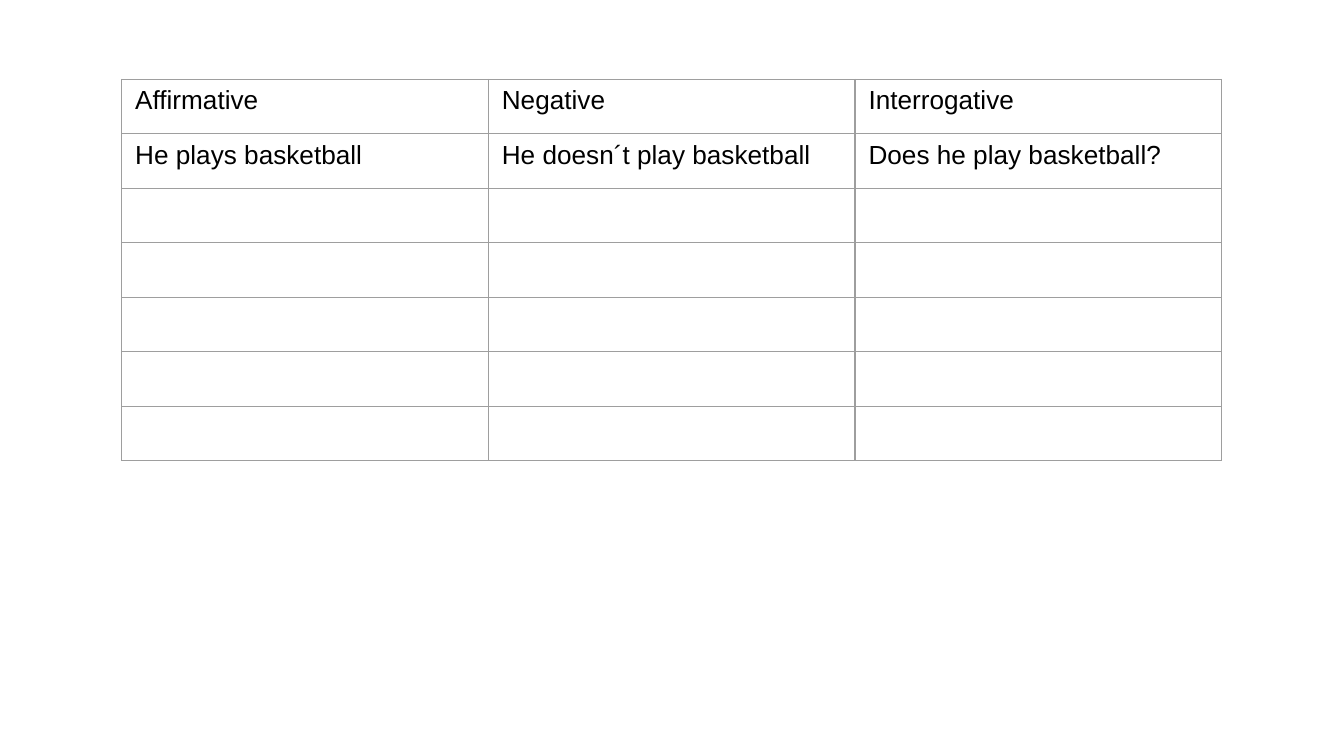
from lxml import etree
from pptx import Presentation
from pptx.dml.color import RGBColor
from pptx.oxml.ns import qn
from pptx.util import Cm, Pt

COLORS = {"text": "000000", "border": "9E9E9E"}
TEXT_FORMAT = {"name": "Arial", "size": Pt(14), "bold": False}
BORDER_WIDTH = Pt(0.75)
BORDER_SIDES = ("a:lnL", "a:lnR", "a:lnT", "a:lnB")
BLANK_LAYOUT = 6

SENTENCE_FORMS = [
    ("Affirmative", "Negative", "Interrogative"),
    ("He plays basketball", "He doesn´t play basketball", "Does he play basketball?"),
]
EMPTY_ROWS = 5


class SlideBuilder:
    """Holds the style and the slide being built."""

    def __init__(self, slide):
        self.slide = slide

    def table(self, rows, left, top, column_width, row_height):
        row_count, column_count = len(rows), len(rows[0])
        grid = self.slide.shapes.add_table(
            row_count, column_count, Cm(left), Cm(top),
            Cm(column_width * column_count), Cm(row_height * row_count),
        ).table
        grid.first_row = grid.horz_banding = False
        for column in grid.columns:
            column.width = Cm(column_width)
        for row, texts in zip(grid.rows, rows):
            row.height = Cm(row_height)
            for cell, text in zip(row.cells, texts):
                self.cell(cell, text)

    def cell(self, cell, text):
        cell.text = text
        font = cell.text_frame.paragraphs[0].font
        for attribute, value in TEXT_FORMAT.items():
            setattr(font, attribute, value)
        font.color.rgb = RGBColor.from_string(COLORS["text"])
        self.borders(cell)
        cell.fill.background()

    def borders(self, cell):
        properties = cell._tc.get_or_add_tcPr()
        for side in BORDER_SIDES:
            line = etree.SubElement(properties, qn(side), w=str(BORDER_WIDTH))
            fill = etree.SubElement(line, qn("a:solidFill"))
            etree.SubElement(fill, qn("a:srgbClr"), val=COLORS["border"])


def main():
    presentation = Presentation()
    presentation.slide_width, presentation.slide_height = Cm(25.4), Cm(14.29)
    slide = presentation.slides.add_slide(presentation.slide_layouts[BLANK_LAYOUT])

    # Example sentences, then rows for the learner to fill in
    exercise_rows = SENTENCE_FORMS + [("", "", "")] * EMPTY_ROWS
    SlideBuilder(slide).table(
        exercise_rows, left=2.3, top=1.5, column_width=6.93, row_height=1.03
    )
    presentation.save("out.pptx")


if __name__ == "__main__":
    main()
